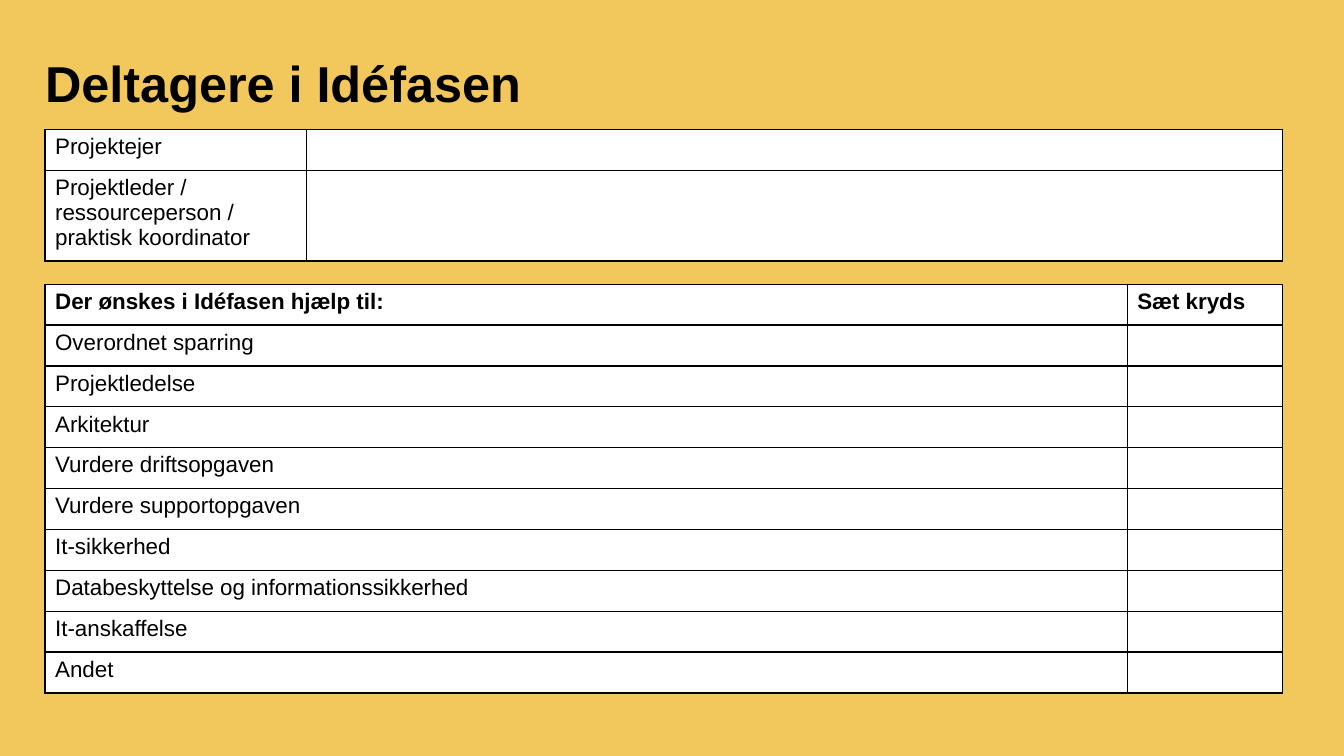
"""Build the slide that lists who takes part in the idea phase."""
from dataclasses import dataclass

from pptx import Presentation
from pptx.dml.color import RGBColor as Rgb
from pptx.oxml import parse_xml
from pptx.oxml.ns import nsdecls
from pptx.util import Pt


@dataclass(frozen=True)
class Theme:
    font: str = "Arial"
    back: str = "F2C75C"
    fill: str = "FFFFFF"
    ink: str = "000000"
    title: int = 36
    body: int = 16
    line: int = 1


class Board:
    def __init__(self, slide, theme):
        self.slide, self.theme = slide, theme
        back = slide.background.fill
        back.solid()
        back.fore_color.rgb = Rgb.from_string(theme.back)

    def style(self, para, size, bold):
        font = para.font
        font.name, font.size, font.bold = self.theme.font, Pt(size), bold
        font.color.rgb = Rgb.from_string(self.theme.ink)

    def title(self, text, x, y, w, h):
        frame = self.slide.shapes.add_textbox(Pt(x), Pt(y), Pt(w), Pt(h)).text_frame
        frame.word_wrap = True
        frame.margin_left = frame.margin_right = 0
        frame.margin_top = frame.margin_bottom = 0
        para = frame.paragraphs[0]
        para.text = text
        para.line_spacing = 0.97
        self.style(para, self.theme.title, True)

    def border(self, cell):
        props = cell._tc.get_or_add_tcPr()
        for side in "LRTB":
            props.append(parse_xml(
                f'<a:ln{side} {nsdecls("a")} w="{Pt(self.theme.line)}"><a:solidFill>'
                f'<a:srgbClr val="{self.theme.ink}"/></a:solidFill></a:ln{side}>'))

    def cell(self, cell, text, bold):
        self.border(cell)
        cell.fill.solid()
        cell.fill.fore_color.rgb = Rgb.from_string(self.theme.fill)
        cell.text = text
        self.style(cell.text_frame.paragraphs[0], self.theme.body, bold)

    def table(self, rows, x, y, widths, heights, head=False):
        frame = self.slide.shapes.add_table(
            len(rows), len(widths), Pt(x), Pt(y), Pt(sum(widths)), Pt(sum(heights)))
        table = frame.table
        table.first_row, table.horz_banding = head, False
        for col, width in zip(table.columns, widths):
            col.width = Pt(width)
        for r, (row, height) in enumerate(zip(rows, heights)):
            table.rows[r].height = Pt(height)
            for c, text in enumerate(row):
                self.cell(table.cell(r, c), text, head and r == 0)


ROLES = ["Projektejer", "Projektleder / ressourceperson / praktisk koordinator"]
TASKS = [
    "Overordnet sparring",
    "Projektledelse",
    "Arkitektur",
    "Vurdere driftsopgaven",
    "Vurdere supportopgaven",
    "It-sikkerhed",
    "Databeskyttelse og informationssikkerhed",
    "It-anskaffelse",
    "Andet",
]
LEFT, ROW = 32.2, 29.2


def main():
    deck = Presentation()
    deck.slide_width, deck.slide_height = Pt(960), Pt(540)
    board = Board(deck.slides.add_slide(deck.slide_layouts[6]), Theme())
    board.title("Deltagere i Idéfasen", LEFT, 39.6, 863, 52.5)
    board.table([(role, "") for role in ROLES], LEFT, 92.5, (186.5, 697.5), (ROW, 60.7))
    help_rows = [("Der ønskes i Idéfasen hjælp til:", "Sæt kryds")]
    help_rows += [(task, "") for task in TASKS]
    board.table(help_rows, LEFT, 203, (773, 111), [ROW] * len(help_rows), head=True)
    deck.save("out.pptx")


if __name__ == "__main__":
    main()
